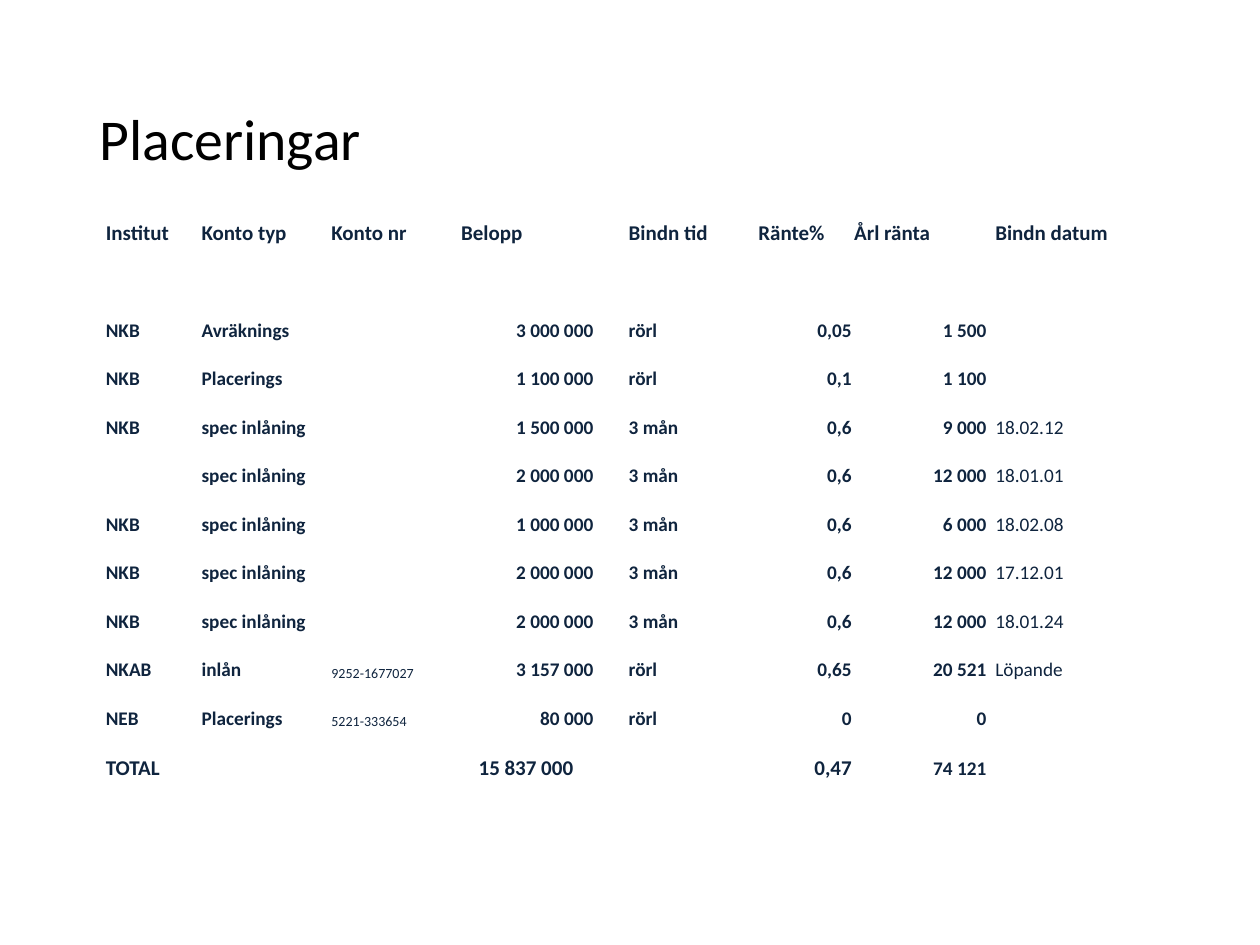
import pptx
import pptx.util
import pptx.dml.color
import pptx.enum.text
from pptx.util import Inches

FONT = "Calibri"
NAVY = "0F243E"
LEFT = pptx.enum.text.PP_ALIGN.LEFT
RIGHT = pptx.enum.text.PP_ALIGN.RIGHT
MIDDLE = pptx.enum.text.MSO_ANCHOR.MIDDLE
BOTTOM = pptx.enum.text.MSO_ANCHOR.BOTTOM

KONTO_NR, BELOPP, RANTE, ARL_RANTA, DATUM = 2, 3, 5, 6, 7
COL_WIDTHS = [0.76, 1.03, 1.03, 1.33, 1.03, 0.76, 1.12, 1.14]
TABLE_HEIGHT = 4.65
END_ROW_HEIGHT = 0.4

HEADER = ["Institut", "Konto typ", "Konto nr", "Belopp",
          "Bindn tid", "Ränte%", "Årl ränta", "Bindn datum"]
ACCOUNTS = [
    ["NKB", "Avräknings", "", "3 000 000", "rörl", "0,05", "1 500", ""],
    ["NKB", "Placerings", "", "1 100 000", "rörl", "0,1", "1 100", ""],
    ["NKB", "spec inlåning", "", "1 500 000", "3 mån", "0,6", "9 000", "18.02.12"],
    ["", "spec inlåning", "", "2 000 000", "3 mån", "0,6", "12 000", "18.01.01"],
    ["NKB", "spec inlåning", "", "1 000 000", "3 mån", "0,6", "6 000", "18.02.08"],
    ["NKB", "spec inlåning", "", "2 000 000", "3 mån", "0,6", "12 000", "17.12.01"],
    ["NKB", "spec inlåning", "", "2 000 000", "3 mån", "0,6", "12 000", "18.01.24"],
    ["NKAB", "inlån", "9252-1677027", "3 157 000", "rörl", "0,65", "20 521", "Löpande"],
    ["NEB", "Placerings", "5221-333654", "80 000", "rörl", "0", "0", ""],
]
TOTAL = ["TOTAL", "", "", "15 837 000", "", "0,47", "74 121", ""]
ROWS = [HEADER, [""] * len(HEADER), *ACCOUNTS, TOTAL]


def color(value):
    return pptx.dml.color.RGBColor.from_string(value)


def add_run(p, text, size, fill, bold=False):
    r = p.add_run()
    r.text = text
    r.font.name = FONT
    r.font.size = pptx.util.Pt(size)
    r.font.bold = bold
    r.font.color.rgb = color(fill)


def add_title(s, text):
    sp = s.shapes.title
    sp.left, sp.top = Inches(0.69), Inches(0.4)
    sp.width, sp.height = Inches(8.62), Inches(1.45)
    tf = sp.text_frame
    tf.vertical_anchor = MIDDLE
    p = tf.paragraphs[0]
    p.alignment = LEFT
    p.line_spacing = 0.9
    add_run(p, text, 33, "000000")


def text_size(row, col):
    if row == 0:
        return 12
    if row == len(ROWS) - 1:
        return 11 if col == ARL_RANTA else 12
    return 8 if col == KONTO_NR else 11


def right_margin(row, col):
    if row == 0:
        return 0.01
    if col == BELOPP:
        return 0.43 if row == len(ROWS) - 1 else 0.27
    return 0.06 if col == ARL_RANTA else 0.01


def fill_cell(cell, row, col, text):
    cell.fill.background()
    cell.vertical_anchor = BOTTOM
    cell.margin_left = cell.margin_top = Inches(0.01)
    cell.margin_right = Inches(right_margin(row, col))
    cell.margin_bottom = 0
    if not text:
        return
    p = cell.text_frame.paragraphs[0]
    is_number = row > 0 and col in (BELOPP, RANTE, ARL_RANTA)
    p.alignment = RIGHT if is_number else LEFT
    bold = row == 0 or col not in (KONTO_NR, DATUM)
    add_run(p, text, text_size(row, col), NAVY, bold)


def add_placements_table(s):
    table = s.shapes.add_table(
        len(ROWS), len(HEADER), Inches(0.83), Inches(1.55),
        Inches(sum(COL_WIDTHS)), Inches(TABLE_HEIGHT)).table
    table.first_row = False
    table.horz_banding = False
    for column, width in zip(table.columns, COL_WIDTHS):
        column.width = Inches(width)
    last = len(ROWS) - 1
    inner_height = (TABLE_HEIGHT - 2 * END_ROW_HEIGHT) / (len(ROWS) - 2)
    for row, values in enumerate(ROWS):
        height = END_ROW_HEIGHT if row in (0, last) else inner_height
        table.rows[row].height = Inches(height)
        for col, text in enumerate(values):
            fill_cell(table.cell(row, col), row, col, text)


def main():
    prs = pptx.Presentation()
    prs.slide_width, prs.slide_height = Inches(10), Inches(7.5)
    s = prs.slides.add_slide(prs.slide_layouts[5])
    add_title(s, "Placeringar")
    add_placements_table(s)
    prs.save("out.pptx")


if __name__ == "__main__":
    main()
